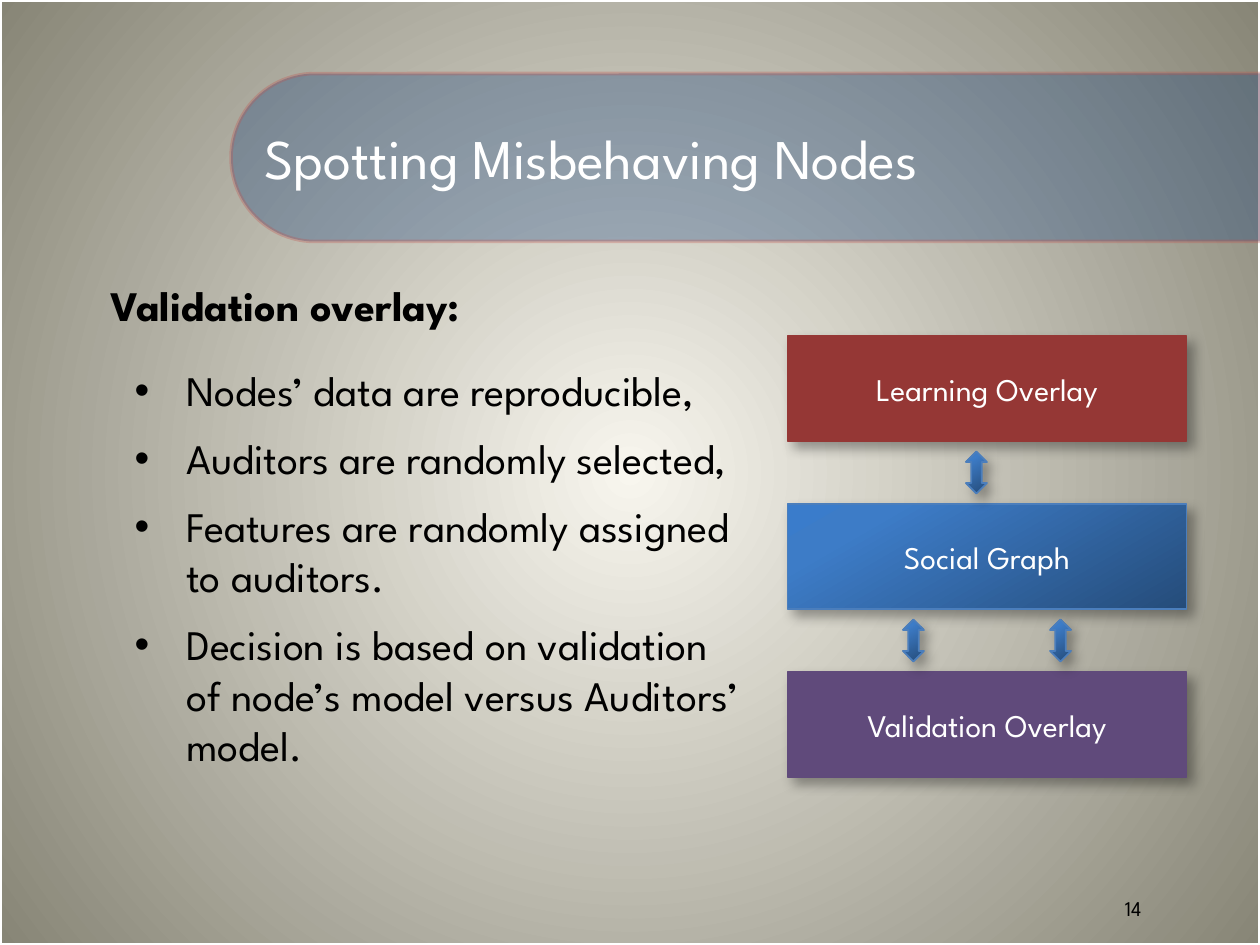
from dataclasses import dataclass
from typing import Any, Optional

import pptx
import pptx.dml.color
import pptx.enum.shapes
import pptx.enum.text
import pptx.oxml
import pptx.oxml.ns
import pptx.util

Pt = pptx.util.Pt
qn = pptx.oxml.ns.qn
MSO_SHAPE = pptx.enum.shapes.MSO_SHAPE
PP_ALIGN = pptx.enum.text.PP_ALIGN
MIDDLE = pptx.enum.text.MSO_ANCHOR.MIDDLE

FONT = "League Spartan"
BLACK, WHITE = "000000", "FFFFFF"
BLUE_LINE = "4B7EBC"
BLUE_STOPS = [(0, "254C7A"), (80, "3D7CC7"), (100, "3A7CCB")]
BLUE_DIRECTION = '<a:lin ang="14400000" scaled="0"/>'
PAGE_STOPS = [(0, "F8F6EE"), (100, "878576")]
PAGE_DIRECTION = (
    '<a:path path="circle"><a:fillToRect l="50000" t="50000" r="50000" b="50000"/></a:path>'
)

BULLETS = [
    "Nodes’ data are reproducible,",
    "Auditors are randomly selected,",
    "Features are randomly assigned to auditors.",
    "Decision is based on validation of node’s model versus Auditors’ model.",
]


@dataclass
class Layer:
    """A box of the diagram; without a colour it gets the blue gradient."""
    label: str
    color: Optional[str] = None


@dataclass
class Arrow:
    center_x: float
    gap: int  # index of the layer above the arrow


LAYERS = [
    Layer("Learning Overlay", "953735"),
    Layer("Social Graph"),
    Layer("Validation Overlay", "604A7B"),
]
ARROWS = [Arrow(558, 0), Arrow(522, 1), Arrow(606, 1)]
LAYER_X, LAYER_Y, LAYER_W, LAYER_H, LAYER_PITCH = 450, 192, 228, 60, 96
ARROW_W, ARROW_H = 12, 24


def rgb(color: str) -> pptx.dml.color.RGBColor:
    return pptx.dml.color.RGBColor.from_string(color)


def xml(tag: str, attrs: str, content: str = "") -> Any:
    """Parse one DrawingML element."""
    return pptx.oxml.parse_xml(
        f'<a:{tag} {pptx.oxml.ns.nsdecls("a")} {attrs}>{content}</a:{tag}>')


def set_gradient(fill: Any, holder: Any, stops: list, direction: str) -> None:
    fill.gradient()
    old = next(holder.iter(qn("a:gradFill")))
    gs = "".join(f'<a:gs pos="{pos * 1000}"><a:srgbClr val="{color}"/></a:gs>'
                 for pos, color in stops)
    new = xml("gradFill", 'rotWithShape="1"', f"<a:gsLst>{gs}</a:gsLst>{direction}")
    old.getparent().replace(old, new)


def place(sp: Any, x: float, y: float, w: float, h: float) -> None:
    sp.left, sp.top, sp.width, sp.height = Pt(x), Pt(y), Pt(w), Pt(h)


def style(p: Any, size: float, color: str, bold: bool = False,
          align: Any = PP_ALIGN.CENTER) -> None:
    p.alignment = align
    for r in p.runs:
        r.font.name, r.font.size, r.font.bold = FONT, Pt(size), bold
        r.font.color.rgb = rgb(color)


def add_shape(s: Any, kind: Any, x: float, y: float, w: float, h: float,
              line: str, line_width: float = 1) -> Any:
    sp = s.shapes.add_shape(kind, Pt(x), Pt(y), Pt(w), Pt(h))
    sp.shadow.inherit = False
    sp.line.color.rgb = rgb(line)
    sp.line.width = Pt(line_width)
    return sp


def add_shadow(sp: Any) -> None:
    effects = sp._element.spPr.find(qn("a:effectLst"))
    effects.append(xml(
        "outerShdw",
        f'blurRad="{Pt(7)}" dist="{Pt(5)}" dir="3000000" algn="tl" rotWithShape="0"',
        '<a:srgbClr val="000000"><a:alpha val="35000"/></a:srgbClr>'))


def fill_raised(sp: Any, color: Optional[str]) -> None:
    """Fill a diagram shape and give it its drop shadow."""
    if color:
        sp.fill.solid()
        sp.fill.fore_color.rgb = rgb(color)
    else:
        set_gradient(sp.fill, sp._element.spPr, BLUE_STOPS, BLUE_DIRECTION)
    add_shadow(sp)


def add_backdrop(s: Any) -> None:
    """Page gradient, white frame and translucent title tab, behind the text."""
    set_gradient(s.background.fill, s._element, PAGE_STOPS, PAGE_DIRECTION)
    frame = add_shape(s, MSO_SHAPE.RECTANGLE, 0, 0, 720, 540, WHITE, 2)
    frame.fill.background()

    tab = add_shape(s, MSO_SHAPE.ROUND_2_SAME_RECTANGLE, 378, -204, 96, 588, "C0504D", 2)
    tab.rotation = 270
    tab.adjustments[0], tab.adjustments[1] = 0.5, 0
    tab.fill.solid()
    tab.fill.fore_color.rgb = rgb("073779")
    for clr in tab._element.spPr.iter(qn("a:srgbClr")):
        clr.append(xml("alpha", 'val="30000"'))

    for index, sp in enumerate((frame, tab), start=2):
        s.shapes._spTree.insert(index, sp._element)


def fill_title(sp: Any) -> None:
    place(sp, 144, 42, 576, 96)
    tf = sp.text_frame
    tf.text = "Spotting Misbehaving Nodes"
    tf.vertical_anchor = MIDDLE
    style(tf.paragraphs[0], 32, WHITE, align=PP_ALIGN.LEFT)


def fill_body(sp: Any) -> None:
    place(sp, 56, 156, 376, 348)
    tf = sp.text_frame
    tf.auto_size = pptx.enum.text.MSO_AUTO_SIZE.NONE
    tf.text = "\n".join(["Validation overlay:"] + BULLETS)
    for i, p in enumerate(tf.paragraphs):
        pPr = p._p.get_or_add_pPr()
        if i == 0:
            pPr.set("marL", "0")
            pPr.set("indent", "0")
            pPr.append(xml("buNone", ""))
        else:
            p.level = 1
            pPr.set("marL", str(Pt(43.2)))
            pPr.set("indent", str(Pt(-29.5)))
            pPr.append(xml("buFont", 'typeface="Arial"'))
            pPr.append(xml("buChar", 'char="•"'))
        p.space_before = Pt(0)
        p.space_after = Pt(10 if i else 20)
        style(p, 24, BLACK, bold=i == 0, align=PP_ALIGN.LEFT)


def add_page_number(s: Any, number: int) -> None:
    tf = s.shapes.add_textbox(Pt(588), Pt(510), Pt(119), Pt(18)).text_frame
    tf.word_wrap = True
    tf.text = str(number)
    tf.vertical_anchor = MIDDLE
    style(tf.paragraphs[0], 12, BLACK)


def add_layer(s: Any, layer: Layer, row: int) -> None:
    sp = add_shape(s, MSO_SHAPE.RECTANGLE, LAYER_X, LAYER_Y + row * LAYER_PITCH,
                   LAYER_W, LAYER_H, layer.color or BLUE_LINE)
    fill_raised(sp, layer.color)
    sp.text_frame.text = layer.label
    sp.text_frame.vertical_anchor = MIDDLE
    style(sp.text_frame.paragraphs[0], 18, WHITE)


def add_arrow(s: Any, arrow: Arrow) -> None:
    gap_top = LAYER_Y + arrow.gap * LAYER_PITCH + LAYER_H
    y = gap_top + (LAYER_PITCH - LAYER_H - ARROW_H) / 2
    sp = add_shape(s, MSO_SHAPE.UP_DOWN_ARROW, arrow.center_x - ARROW_W / 2, y,
                   ARROW_W, ARROW_H, BLUE_LINE)
    fill_raised(sp, None)


def main() -> None:
    prs = pptx.Presentation()
    prs.slide_width, prs.slide_height = Pt(720), Pt(540)
    s = prs.slides.add_slide(prs.slide_layouts[1])
    add_backdrop(s)
    fill_title(s.shapes.title)
    fill_body(s.placeholders[1])
    add_page_number(s, 14)
    for row, layer in enumerate(LAYERS):
        add_layer(s, layer, row)
    for arrow in ARROWS:
        add_arrow(s, arrow)
    prs.save("out.pptx")


if __name__ == "__main__":
    main()
